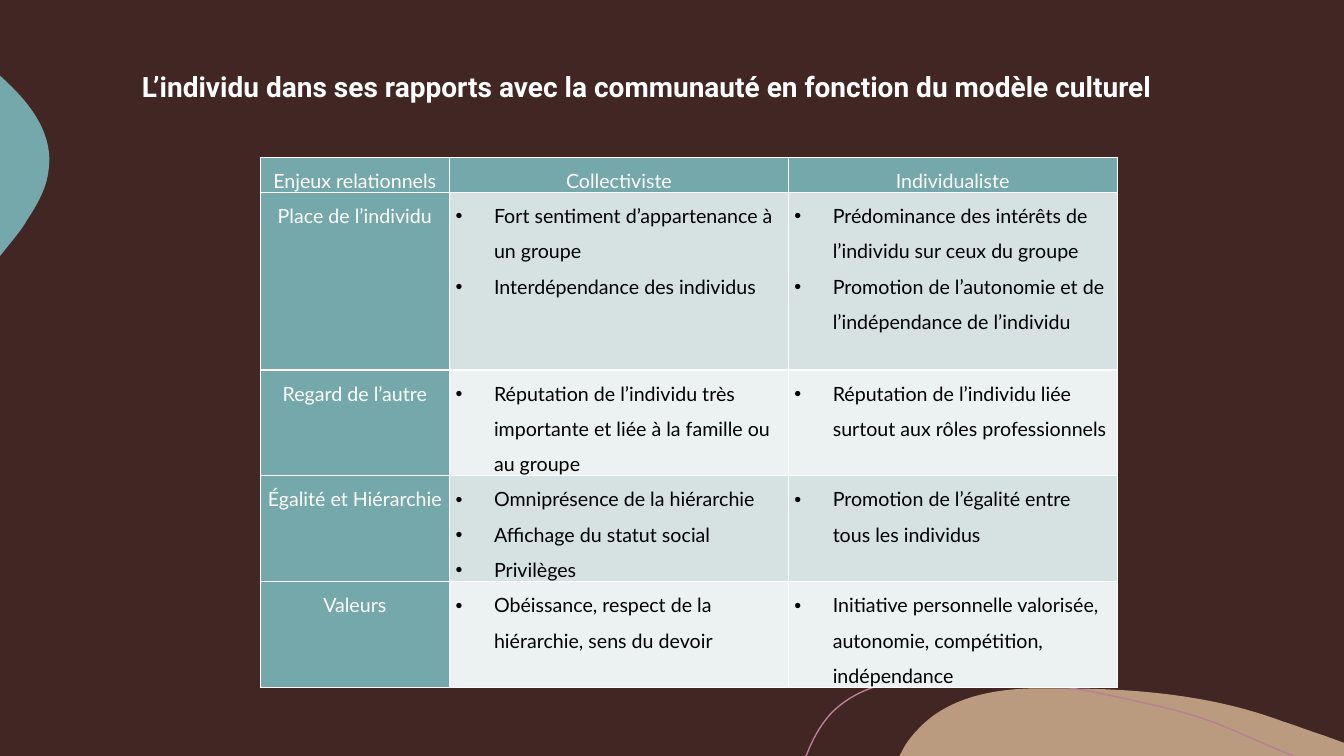
from lxml.etree import SubElement
from pptx import Presentation
from pptx.dml.color import RGBColor
from pptx.enum.text import MSO_ANCHOR as Anchor, PP_ALIGN as Align
from pptx.oxml.ns import qn
from pptx.util import Pt

PX = 9144  # EMU per px, 100 px to the inch
BROWN = RGBColor(0x41, 0x26, 0x24)
TEAL = RGBColor(0x75, 0xA8, 0xAB)
SAND = RGBColor(0xBA, 0x9B, 0x7F)
PINK = RGBColor(0xBA, 0x7F, 0x94)
PALE = RGBColor(0xD6, 0xE1, 0xE2)
PALER = RGBColor(0xEC, 0xF1, 0xF1)
WHITE = RGBColor(0xFF, 0xFF, 0xFF)
BLACK = RGBColor(0x00, 0x00, 0x00)

TITLE = "L’individu dans ses rapports avec la communauté en fonction du modèle culturel"
HEADINGS = ["Enjeux relationnels", "Collectiviste", "Individualiste"]
ISSUES = [
    ("Place de l’individu",
     ["Fort sentiment d’appartenance à un groupe", "Interdépendance des individus"],
     ["Prédominance des intérêts de l’individu sur ceux du groupe",
      "Promotion de l’autonomie et de l’indépendance de l’individu"]),
    ("Regard de l’autre",
     ["Réputation de l’individu très importante et liée à la famille ou au groupe"],
     ["Réputation de l’individu liée surtout aux rôles professionnels"]),
    ("Égalité et Hiérarchie",
     ["Omniprésence de la hiérarchie", "Affichage du statut social", "Privilèges"],
     ["Promotion de l’égalité entre tous les individus"]),
    ("Valeurs",
     ["Obéissance, respect de la hiérarchie, sens du devoir"],
     ["Initiative personnelle valorisée, autonomie, compétition, indépendance"]),
]
COLUMN_WIDTHS = [188, 336, 326]
ROW_HEIGHTS = [35, 176, 90, 90, 90]

# Each outline is a start point, then line ends (2 numbers) or cubic curves (6 numbers).
SAND_HILL = [(1054, 683), (1128, 683, 1204, 690, 1273, 716),
             (1286, 720, 1298, 725, 1311, 729), (1333, 737), (1333, 750), (892, 750),
             (898, 739), (902, 733, 906, 728, 911, 723),
             (939, 693, 982, 684, 1023, 683), (1033, 683, 1043, 683, 1054, 683)]
TEAL_PEBBLE = [(0, 75), (1, 76), (30, 102, 54, 133, 48, 170),
               (46, 187, 37, 203, 27, 218), (24, 224, 17, 233, 8, 244), (0, 254)]
PINK_WAVE = [(799, 750), (800, 749), (806, 733, 814, 719, 824, 708),
             (850, 681, 889, 673, 926, 672), (955, 672),
             (1022, 672, 1100, 689, 1155, 702), (1209, 715, 1226, 727, 1283, 750)]


class SlideBuilder:
    def __init__(self, presentation, background):
        self.slide = presentation.slides.add_slide(presentation.slide_layouts[6])
        self.shapes = self.slide.shapes
        self.title_font, self.table_font = ("Roboto", 20), ("Lato", 14)
        fill = self.slide.background.fill
        fill.solid()
        fill.fore_color.rgb = background

    def curve(self, outline, fill=None, line=None):
        """Draw an outline: closed when it has a fill, open otherwise."""
        start, *segments = outline
        builder = self.shapes.build_freeform(*start, scale=PX)
        builder.add_line_segments([segment[-2:] for segment in segments],
                                  close=fill is not None)
        blob = builder.convert_to_shape()
        self.bend(blob, segments, min(point[-2] for point in outline),
                  min(point[-1] for point in outline))
        blob.shadow.inherit = False
        if fill is None:
            blob.fill.background()
        else:
            blob.fill.solid()
            blob.fill.fore_color.rgb = fill
        if line is None:
            blob.line.fill.background()
        else:
            blob.line.color.rgb = line
            blob.line.width = Pt(1)

    def bend(self, blob, segments, left, top):
        """Turn the straight sides that have control points into cubic curves."""
        sides = list(blob._element.iter(qn("a:lnTo")))
        for side, numbers in zip(sides, segments):
            if len(numbers) == 2:
                continue
            side.tag = qn("a:cubicBezTo")
            for point in list(side):
                side.remove(point)
            for x, y in zip(numbers[::2], numbers[1::2]):
                SubElement(side, qn("a:pt"), x=str(x - left), y=str(y - top))

    def style_runs(self, paragraph, font, color, bold=False):
        for run in paragraph.runs:
            run.font.name, run.font.size = font[0], Pt(font[1])
            run.font.color.rgb, run.font.bold = color, bold

    def title(self, text, left, top, width, height):
        frame = self.shapes.add_textbox(left * PX, top * PX, width * PX, height * PX).text_frame
        frame.word_wrap = True
        frame.vertical_anchor = Anchor.MIDDLE
        frame.margin_bottom = 9 * PX
        frame.text = text
        frame.paragraphs[0].line_spacing = 0.9
        self.style_runs(frame.paragraphs[0], self.title_font, WHITE, bold=True)

    def table(self, left, top, widths, heights):
        frame = self.shapes.add_table(len(heights), len(widths), left * PX, top * PX,
                                      sum(widths) * PX, sum(heights) * PX)
        table = frame.table
        table.first_col = True
        for column, width in zip(table.columns, widths):
            column.width = width * PX
        for row, height in zip(table.rows, heights):
            row.height = height * PX
        return table

    def cell(self, cell, lines, fill, color, bulleted=False):
        cell.margin_left = cell.margin_right = 6 * PX
        cell.margin_top = cell.margin_bottom = 0
        cell.fill.solid()
        cell.fill.fore_color.rgb = fill
        cell.text_frame.text = "\n".join(lines)
        for paragraph in cell.text_frame.paragraphs:
            paragraph.line_spacing = 1.5
            paragraph.alignment = Align.LEFT if bulleted else Align.CENTER
            self.style_runs(paragraph, self.table_font, color)
            if bulleted:
                self.bullet(paragraph, 38)

    def bullet(self, paragraph, indent):
        properties = paragraph._p.get_or_add_pPr()
        properties.set("marL", str(indent * PX))
        properties.set("indent", str(-indent * PX))
        SubElement(properties, qn("a:buFont"), typeface="Arial")
        SubElement(properties, qn("a:buChar"), char="•")


def main():
    presentation = Presentation()
    presentation.slide_width, presentation.slide_height = 1333 * PX, 750 * PX
    page = SlideBuilder(presentation, BROWN)
    page.curve(SAND_HILL, fill=SAND)
    page.curve(TEAL_PEBBLE, fill=TEAL)
    page.curve(PINK_WAVE, line=PINK)
    page.title(TITLE, 131, 32, 1072, 115)

    table = page.table(258, 156, COLUMN_WIDTHS, ROW_HEIGHTS)
    for column, heading in enumerate(HEADINGS):
        page.cell(table.cell(0, column), [heading], TEAL, WHITE)
    for row, (issue, *models) in enumerate(ISSUES, start=1):
        page.cell(table.cell(row, 0), [issue], TEAL, WHITE)
        for column, traits in enumerate(models, start=1):
            page.cell(table.cell(row, column), traits, PALE if row % 2 else PALER, BLACK,
                      bulleted=True)
    presentation.save("out.pptx")


if __name__ == "__main__":
    main()
